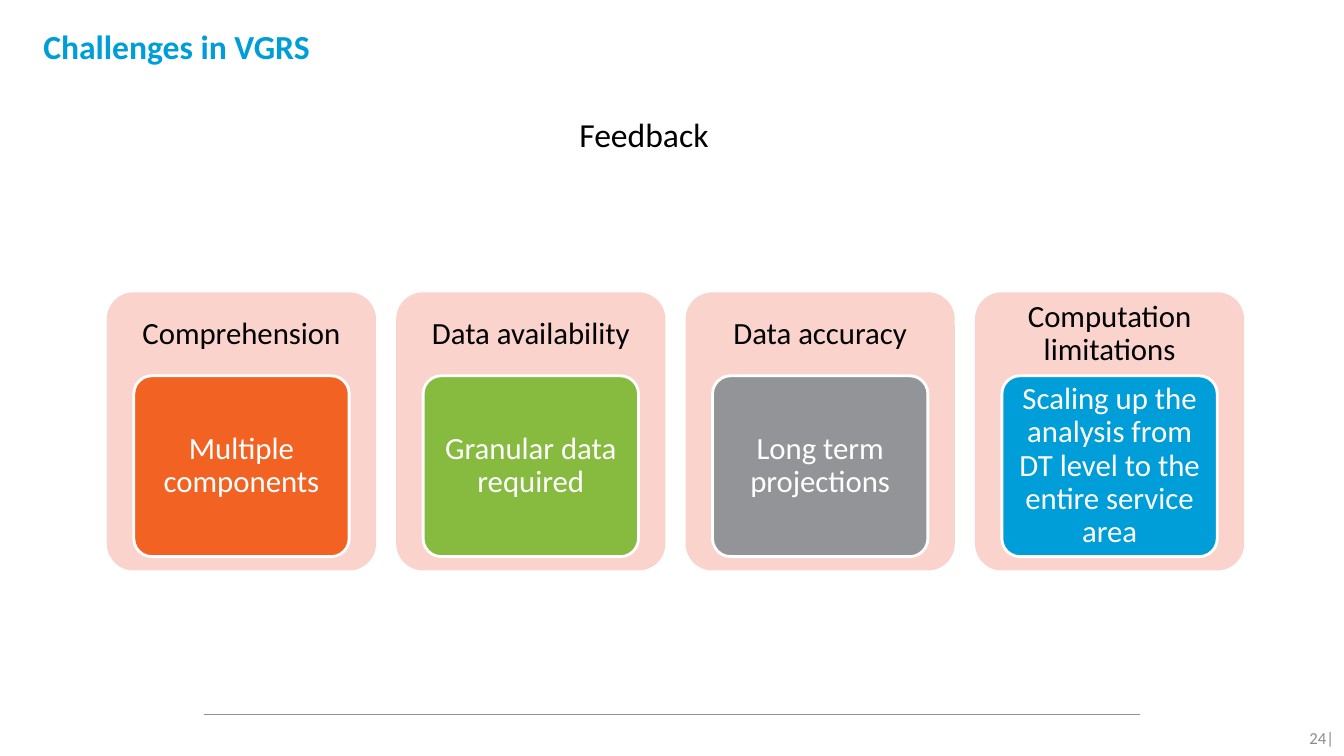
from lxml.etree import SubElement
from pptx import Presentation
from pptx.dml.color import RGBColor
from pptx.enum.shapes import MSO_CONNECTOR, MSO_SHAPE
from pptx.enum.text import MSO_ANCHOR as Anchor, PP_ALIGN as Align
from pptx.oxml.ns import qn
from pptx.util import Inches, Pt

COLORS = {
    "blue": "009ED8", "orange": "F16223", "green": "86BB3F", "gray": "929497",
    "pink": "FAD3CD", "rule": "8F9194", "number": "8C8C8C",
    "black": "000000", "white": "FFFFFF",
}
CHALLENGES = [
    ("Comprehension", "Multiple components", "orange"),
    ("Data availability", "Granular data required", "green"),
    ("Data accuracy", "Long term projections", "gray"),
    ("Computation limitations",
     "Scaling up the analysis from DT level to the entire service area", "blue"),
]


def rgb(name):
    return RGBColor.from_string(COLORS[name])


def write(shape, text, size=22, color="black", bold=False, align=Align.CENTER,
          anchor=Anchor.MIDDLE, insets=(0.1, 0.05), spacing=1.0):
    """Fill a shape with one formatted paragraph; insets are (sides, top and bottom)."""
    frame = shape.text_frame
    frame.word_wrap = True
    frame.vertical_anchor = anchor
    frame.margin_left = frame.margin_right = Inches(insets[0])
    frame.margin_top = frame.margin_bottom = Inches(insets[1])
    para = frame.paragraphs[0]
    para.alignment = align
    para.line_spacing = spacing
    span = para.add_run()
    span.text = text
    span.font.name = "Calibri"
    span.font.size = Pt(size)
    span.font.bold = bold
    span.font.color.rgb = rgb(color)


def add_label(page, box, text, **style):
    write(page.shapes.add_textbox(*map(Inches, box)), text, **style)


def add_panel(page, box, fill, outline=None):
    panel = page.shapes.add_shape(MSO_SHAPE.ROUNDED_RECTANGLE, *map(Inches, box))
    panel.adjustments[0] = 0.1
    panel.shadow.inherit = False
    panel.fill.solid()
    panel.fill.fore_color.rgb = rgb(fill)
    if outline:
        panel.line.color.rgb = rgb(outline)
        panel.line.width = Pt(2)
    else:
        panel.line.fill.background()
    return panel


def add_title(page, box, text):
    title = page.shapes.title
    title.left, title.top, title.width, title.height = map(Inches, box)
    write(title, text, size=24, color="blue", bold=True, align=Align.LEFT,
          anchor=Anchor.TOP, insets=(0, 0.05))


def add_card(page, box, heading, detail, color):
    left, top, width, height = box
    heading_height = 0.3 * height
    side = 0.1 * width
    add_panel(page, box, "pink")
    add_label(page, (left, top, width, heading_height), heading,
              insets=(0.09, 0.09), spacing=0.9)
    tile_box = (left + side, top + heading_height, width - 2 * side, 0.65 * height)
    tile = add_panel(page, tile_box, color, outline="white")
    write(tile, detail, color="white", insets=(0.06, 0.05), spacing=0.9)


def add_card_row(page, box, challenges, gap=0.2):
    left, top, width, height = box
    card_width = (width - gap * (len(challenges) - 1)) / len(challenges)
    for index, challenge in enumerate(challenges):
        card_left = left + index * (card_width + gap)
        add_card(page, (card_left, top, card_width, height), *challenge)


def add_footer(page, box, number):
    left, top, width, height = box
    rule = page.shapes.add_connector(
        MSO_CONNECTOR.STRAIGHT, Inches(left + 2.02), Inches(top),
        Inches(left + 11.31), Inches(top))
    rule.line.color.rgb = rgb("rule")
    rule.line.width = Pt(0.75)
    SubElement(rule._element.spPr, qn("a:effectLst"))
    add_label(page, (left + width - 0.85, top + 0.03, 0.85, height - 0.03), number,
              size=12, color="number", align=Align.RIGHT)


def main():
    deck = Presentation()
    deck.slide_width, deck.slide_height = Inches(13.33), Inches(7.5)
    page = deck.slides.add_slide(deck.slide_layouts[5])
    add_footer(page, (0, 7.09, 13.33, 0.43), "24|")
    add_title(page, (0.43, 0.21, 12.34, 0.87), "Challenges in VGRS")
    add_card_row(page, (1.06, 2.9, 11.28, 2.76), CHALLENGES)
    add_label(page, (3.22, 1.08, 6.41, 0.5), "Feedback ", size=24, anchor=Anchor.TOP)
    deck.save("out.pptx")


if __name__ == "__main__":
    main()
